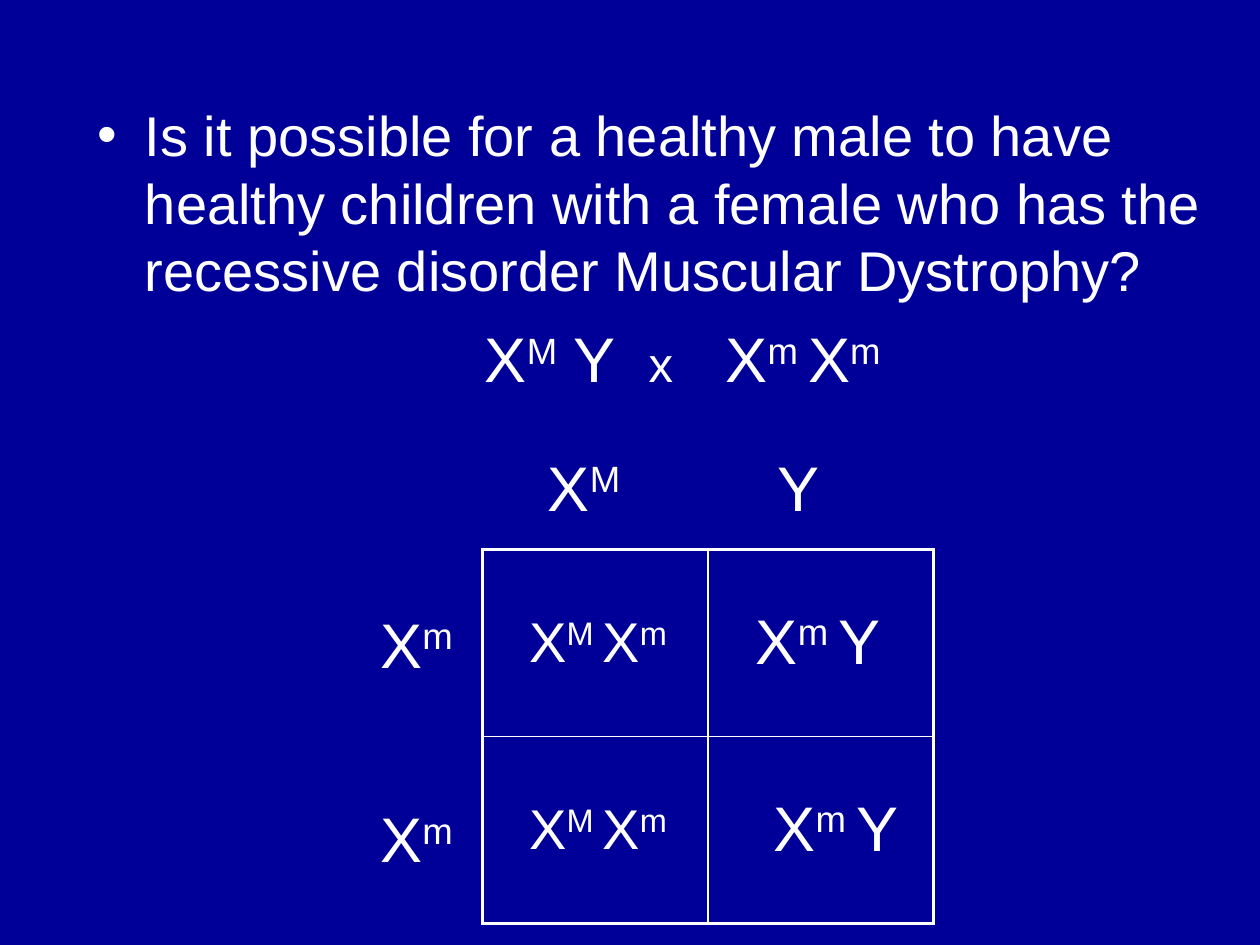
from lxml import etree
from pptx import Presentation
from pptx.dml.color import RGBColor
from pptx.enum.text import MSO_ANCHOR
from pptx.oxml.ns import qn
from pptx.util import Inches, Pt

MIDDLE = MSO_ANCHOR.MIDDLE
COLORS = {"back": "000099", "ink": "FFFFFF"}
FONT = "Arial"
COLS, ROWS = 40, 30
THIN, THICK = 1, 2.25


class Deck:
    """Holds the style and the current slide; places things on a 40 x 30 grid."""

    def __init__(self, prs):
        self.prs = prs
        self.slide = None

    def new_slide(self, layout):
        self.slide = self.prs.slides.add_slide(self.prs.slide_layouts[layout])
        fill = self.slide.background.fill
        fill.solid()
        fill.fore_color.rgb = RGBColor.from_string(COLORS["back"])

    def box(self, col, row, cols, rows):
        x, y = self.prs.slide_width / COLS, self.prs.slide_height / ROWS
        return [int(n) for n in (col * x, row * y, cols * x, rows * y)]

    def runs(self, p, text, size):
        """Add runs split at "|"; every second one is superscript."""
        for i, part in enumerate(text.split("|")):
            r = p.add_run()
            r.text = part
            r.font.size = Pt(size)
            r.font.name = FONT
            r.font.color.rgb = RGBColor.from_string(COLORS["ink"])
            if i % 2:
                r.font._element.set("baseline", "30000")

    def bullet(self, sp, text, place, size=32):
        sp.left, sp.top, sp.width, sp.height = self.box(*place)
        p = sp.text_frame.paragraphs[0]
        p.space_before = Pt(size * 0.2)
        pPr = p._p.get_or_add_pPr()
        pPr.set("marL", str(Inches(0.38)))
        pPr.set("indent", str(-Inches(0.38)))
        color = etree.SubElement(pPr, qn("a:buClr"))
        etree.SubElement(color, qn("a:srgbClr"), val=COLORS["ink"])
        etree.SubElement(pPr, qn("a:buFont"), typeface=FONT)
        etree.SubElement(pPr, qn("a:buChar"), char="•")
        self.runs(p, text, size)

    def label(self, parts, place, tabs=()):
        tf = self.slide.shapes.add_textbox(*self.box(*place)).text_frame
        tf.word_wrap = True
        p = tf.paragraphs[0]
        if tabs:
            stops = etree.SubElement(p._p.get_or_add_pPr(), qn("a:tabLst"))
            for tab in tabs:
                etree.SubElement(stops, qn("a:tab"), pos=str(Inches(tab)), algn="l")
        for text, size in parts:
            self.runs(p, text, size)

    def borders(self, cell, widths):
        tcPr = cell._tc.get_or_add_tcPr()
        for i, (side, width) in enumerate(zip("LRTB", widths)):
            ln = etree.Element(qn(f"a:ln{side}"), w=str(Pt(width)))
            fill = etree.SubElement(ln, qn("a:solidFill"))
            etree.SubElement(fill, qn("a:srgbClr"), val=COLORS["ink"])
            tcPr.insert(i, ln)

    def square(self, cells, place):
        """Draw a grid with a thick frame and thin inner lines."""
        n, m = len(cells), len(cells[0])
        table = self.slide.shapes.add_table(n, m, *self.box(*place)).table
        table.first_row = table.horz_banding = False
        for i, row in enumerate(cells):
            for j, (text, size, margin) in enumerate(row):
                cell = table.cell(i, j)
                cell.fill.background()
                cell.vertical_anchor = MIDDLE
                cell.margin_left = Inches(margin)
                p = cell.text_frame.paragraphs[0]
                p.space_before = Pt(size * 0.2)
                self.runs(p, text, size)
                outer = (j == 0, j == m - 1, i == 0, i == n - 1)
                self.borders(cell, [THICK if edge else THIN for edge in outer])


def main():
    prs = Presentation()
    prs.slide_width, prs.slide_height = Inches(10), Inches(7.5)
    deck = Deck(prs)
    deck.new_slide(1)

    # Question
    title, body = deck.slide.placeholders
    title._element.getparent().remove(title._element)
    deck.bullet(body, "Is it possible for a healthy male to have healthy children "
                "with a female who has the recessive disorder Muscular Dystrophy?",
                (2.68, 3, 37.32, 18))

    # Parents
    deck.label([("X|M| Y\t", 36), ("x\t", 28), ("X|m |X|m", 36)],
               (15, 9.96, 13.96, 2.8), tabs=(1.3, 1.91))

    # Punnett square
    daughter = ("X|M |X|m", 32, 0.37)
    deck.square([[daughter, ("X|m |Y", 36, 0.38)],
                 [daughter, ("X|m |Y", 36, 0.52)]],
                (15.32, 17.44, 14.32, 11.88))

    # Gametes of the father above, of the mother at the left
    deck.label([("X|M|\tY", 36)], (17, 14.04, 11.8, 2.8), tabs=(1.82,))
    for row in (19.04, 25.2):
        deck.label([("X|m", 36)], (11.68, row, 3.24, 2.8))

    prs.save("out.pptx")


if __name__ == "__main__":
    main()
